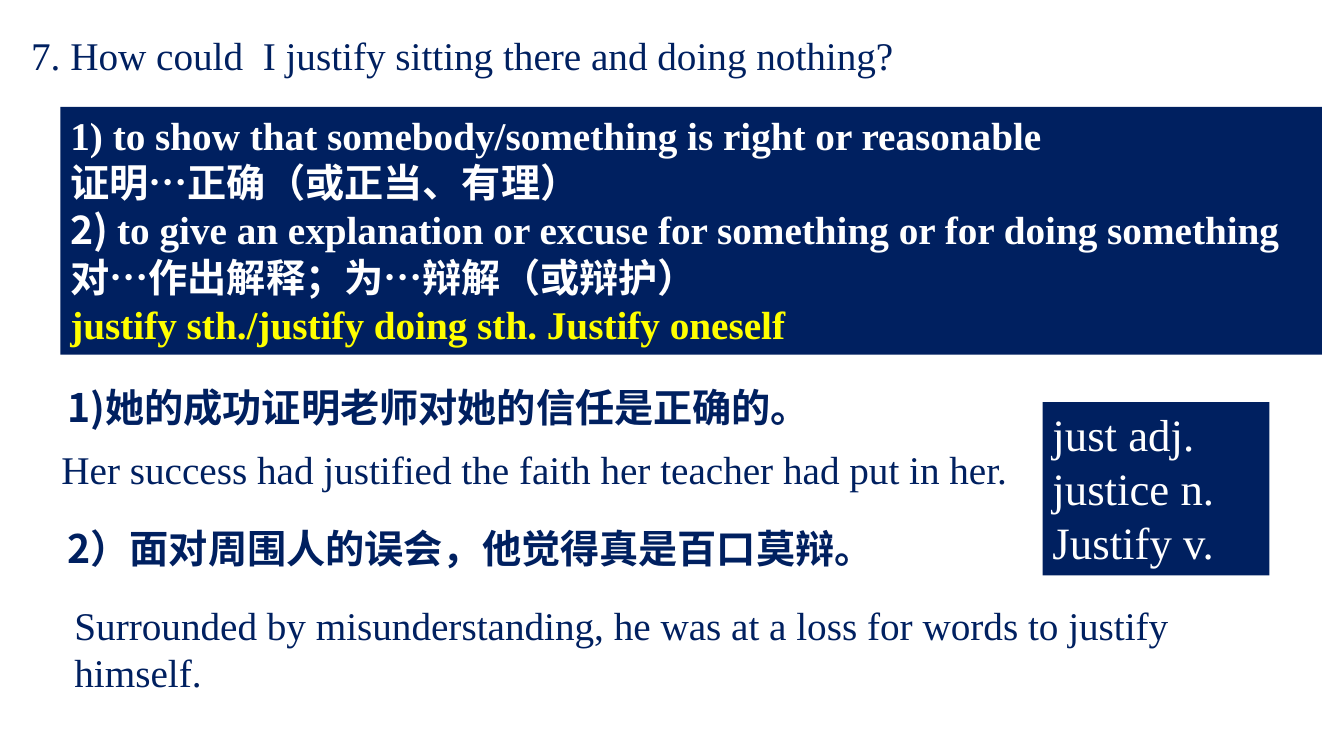
import dataclasses

import pptx
import pptx.dml.color
import pptx.enum.shapes
import pptx.enum.text
import pptx.oxml.ns
import pptx.util
from lxml import etree

SLIDE_WIDTH = pptx.util.Inches(13.33)
SLIDE_HEIGHT = pptx.util.Inches(7.5)
NAVY, WHITE, YELLOW = "002060", "FFFFFF", "FFFF00"
LATIN, CHINESE = "Times New Roman", "Noto Sans CJK SC"
LINE_PITCH = 1.2


@dataclasses.dataclass
class Span:
    text: str
    font: str = LATIN
    color: str | None = None


@dataclasses.dataclass
class Block:
    """Place is left, top, width and height in percent of the slide."""
    place: tuple[float, float, float, float]
    lines: list[list[Span]]
    size: int = 28
    color: str = NAVY
    bold: bool = False
    fill: str | None = None
    blank_rows: int = 0


QUESTION = Block((1.58, 3.47, 97.9, 7.6), [
    [Span("7. How could  I justify sitting there and doing nothing?")]])
MEANINGS = Block((4.5, 14.13, 93.85, 32.8), [
    [Span("1) to show that somebody/something is right or reasonable")],
    [Span("证明…正确（或正当、有理）", CHINESE)],
    [Span("2) ", CHINESE),
     Span("to give an explanation or excuse for something or for doing something")],
    [Span("对…作出解释；为…辩解（或辩护）", CHINESE)],
    [Span("justify sth./justify doing sth. Justify oneself", color=YELLOW)],
], color=WHITE, bold=True, fill=NAVY)
EXERCISES = Block((4.28, 50, 87.25, 26.53), [
    [Span("1)她的成功证明老师对她的信任是正确的。", CHINESE)],
    [Span("2）面对周围人的误会，他觉得真是百口莫辩。", CHINESE)],
], bold=True, blank_rows=2)
FIRST_ANSWER = Block((3.83, 58.27, 97.9, 7.6), [
    [Span("Her success had justified the faith her teacher had put in her.")]])
SECOND_ANSWER = Block((4.8, 78.93, 87.77, 13.87), [
    [Span("Surrounded by misunderstanding, he was at a loss for words "
          "to justify himself.")]])
WORD_FAMILY = Block((77.57, 53.2, 16.88, 22.93), [
    [Span("just adj.")], [Span("justice n.")], [Span("Justify v.")],
], size=32, color=WHITE, fill=NAVY)


def rgb(color: str) -> pptx.dml.color.RGBColor:
    return pptx.dml.color.RGBColor.from_string(color)


def add_text(paragraph, text: str, *, font: str, size: int, color: str,
             bold: bool) -> None:
    run = paragraph.add_run()
    run.text = text
    run.font.size = pptx.util.Pt(size)
    run.font.bold = bold
    run.font.color.rgb = rgb(color)
    run.font.name = font
    east_asian = etree.SubElement(run.font._element, pptx.oxml.ns.qn("a:ea"))
    east_asian.set("typeface", font)


def add_block(slide, block: Block) -> None:
    left, top, width, height = block.place
    frame = (int(SLIDE_WIDTH * left / 100), int(SLIDE_HEIGHT * top / 100),
             int(SLIDE_WIDTH * width / 100), int(SLIDE_HEIGHT * height / 100))
    if block.fill:
        holder = slide.shapes.add_shape(
            pptx.enum.shapes.MSO_SHAPE.RECTANGLE, *frame)
        holder.shadow.inherit = False
        holder.fill.solid()
        holder.fill.fore_color.rgb = rgb(block.fill)
        holder.line.fill.background()
    else:
        holder = slide.shapes.add_textbox(*frame)
    body = holder.text_frame
    body.word_wrap = True
    body.vertical_anchor = pptx.enum.text.MSO_ANCHOR.TOP
    pitch = block.size * LINE_PITCH
    for index, spans in enumerate(block.lines):
        paragraph = body.add_paragraph() if index else body.paragraphs[0]
        paragraph.alignment = pptx.enum.text.PP_ALIGN.LEFT
        paragraph.line_spacing = pptx.util.Pt(pitch)
        if index and block.blank_rows:
            paragraph.space_before = pptx.util.Pt(pitch * block.blank_rows)
        for span in spans:
            add_text(paragraph, span.text, font=span.font, size=block.size,
                     color=span.color or block.color, bold=block.bold)


def main() -> None:
    deck = pptx.Presentation()
    deck.slide_width = SLIDE_WIDTH
    deck.slide_height = SLIDE_HEIGHT
    slide = deck.slides.add_slide(deck.slide_layouts[6])
    for block in (QUESTION, MEANINGS, EXERCISES, FIRST_ANSWER,
                  SECOND_ANSWER, WORD_FAMILY):
        add_block(slide, block)
    deck.save("out.pptx")


if __name__ == "__main__":
    main()
